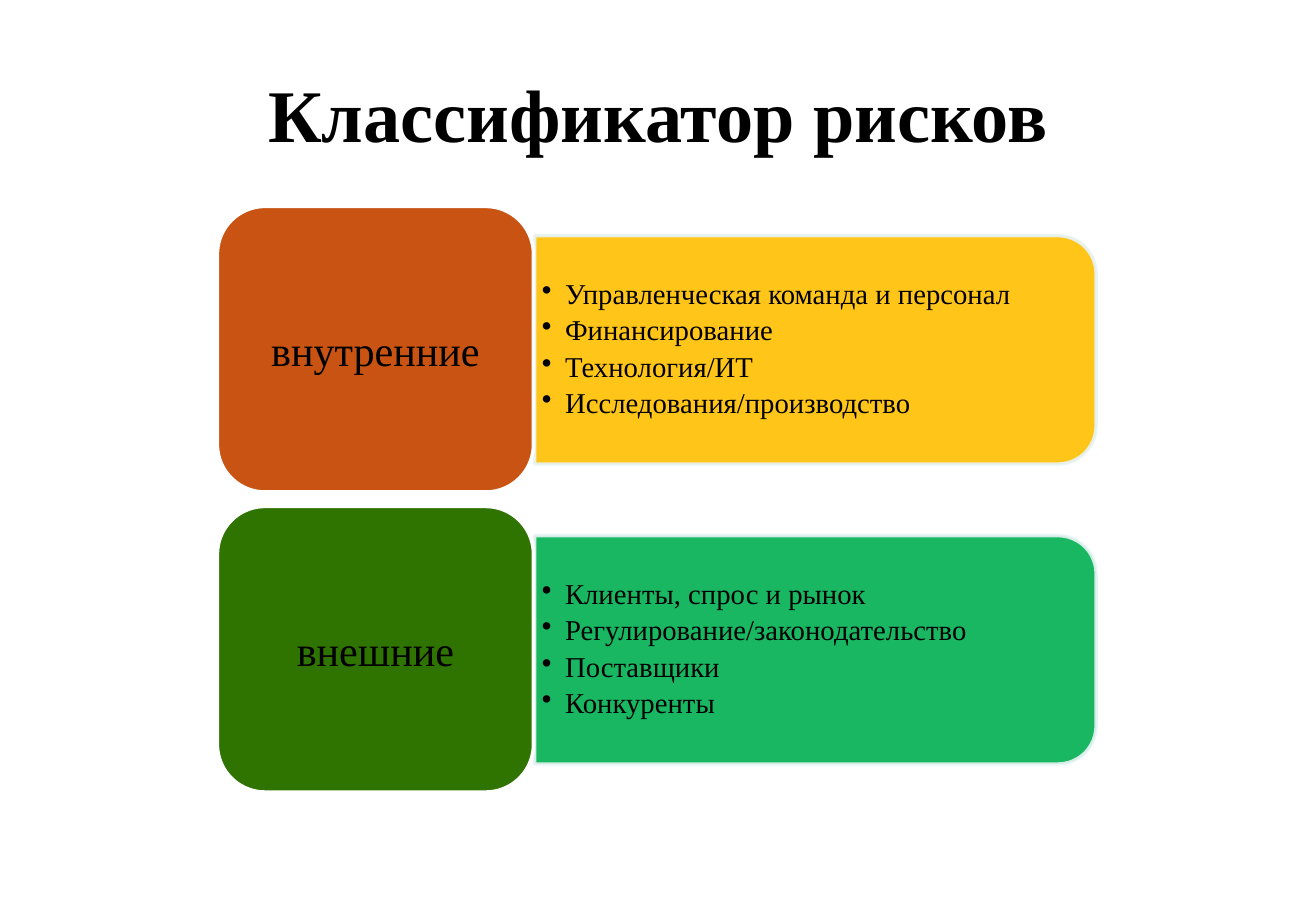
from lxml import etree
from pptx import Presentation
from pptx.dml.color import RGBColor
from pptx.enum.shapes import MSO_SHAPE
from pptx.enum.text import MSO_ANCHOR, PP_ALIGN
from pptx.oxml.ns import qn
from pptx.util import Emu, Pt

ROUNDED = MSO_SHAPE.ROUNDED_RECTANGLE
TOP_ROUNDED = MSO_SHAPE.ROUND_2_SAME_RECTANGLE
MIDDLE = MSO_ANCHOR.MIDDLE
CENTER = PP_ALIGN.CENTER
LEFT = PP_ALIGN.LEFT

EMU_PER_PX = 9144
SLIDE_SIZE = (1083, 750)
FIRST_TOP = 170
ROW_STEP = 247

RISK_GROUPS = [
    ("внутренние", "C85312", "FFC000", [
        "Управленческая команда и персонал",
        "Финансирование",
        "Технология/ИТ",
        "Исследования/производство",
    ]),
    ("внешние", "2F7301", "00B050", [
        "Клиенты, спрос и рынок",
        "Регулирование/законодательство",
        "Поставщики",
        "Конкуренты",
    ]),
]


def px(length):
    return Emu(length * EMU_PER_PX)


def color(value):
    return RGBColor.from_string(value)


def apply(target, formats):
    for name, value in formats.items():
        setattr(target, name, value)


def set_alpha(fill_parent, percent):
    tint = fill_parent.find(qn("a:solidFill")).find(qn("a:srgbClr"))
    etree.SubElement(tint, qn("a:alpha"), val=str(percent * 1000))


class RiskSlide:
    font_name = "Times New Roman"
    text_color = "000000"

    def __init__(self, slide):
        self.shapes = slide.shapes

    def fill_text(self, frame, lines, size, insets, bold=False, bulleted=False):
        across, down = map(px, insets)
        apply(frame, {
            "word_wrap": True, "vertical_anchor": MIDDLE,
            "margin_left": across, "margin_right": across,
            "margin_top": down, "margin_bottom": down,
        })
        for index, line in enumerate(lines):
            paragraph = frame.add_paragraph() if index else frame.paragraphs[0]
            paragraph.alignment = LEFT if bulleted else CENTER
            if bulleted:
                properties = paragraph._p.get_or_add_pPr()
                properties.set("marL", str(px(19)))
                properties.set("indent", str(px(-19)))
                etree.SubElement(properties, qn("a:buChar"), char="•")
                apply(paragraph, {"line_spacing": 0.9, "space_after": Pt(3.3)})
            run = paragraph.add_run()
            run.text = line
            apply(run.font, {"name": self.font_name, "size": Pt(size), "bold": bold})
            run.font.color.rgb = color(self.text_color)

    def text(self, box, lines, size, insets, **style):
        textbox = self.shapes.add_textbox(*map(px, box))
        self.fill_text(textbox.text_frame, lines, size, insets, **style)

    def block(self, kind, box, fill, outline):
        block = self.shapes.add_shape(kind, *map(px, box))
        block.shadow.inherit = False
        block.fill.solid()
        block.fill.fore_color.rgb = color(fill)
        block.line.color.rgb = color(outline)
        block.line.width = Pt(2)
        return block

    def panel(self, top, fill, risks):
        panel = self.block(TOP_ROUNDED, (577, top - 113, 188, 462), fill, "E7F3F4")
        panel.rotation = 90
        properties = panel._element.spPr
        set_alpha(properties, 90)
        set_alpha(properties.find(qn("a:ln")), 90)
        self.text((439, top + 33, 453, 170), risks, 17, (7, 4), bulleted=True)

    def category(self, top, fill, name):
        category = self.block(ROUNDED, (179, top, 260, 235), fill, "FFFFFF")
        self.fill_text(category.text_frame, [name], 25, (10, 5))


def main():
    deck = Presentation()
    deck.slide_width, deck.slide_height = map(px, SLIDE_SIZE)
    classifier = RiskSlide(deck.slides.add_slide(deck.slide_layouts[6]))
    classifier.text((54, 30, 975, 125), ["Классификатор рисков"], 44, (10, 5), bold=True)
    for row, (name, category_fill, panel_fill, risks) in enumerate(RISK_GROUPS):
        top = FIRST_TOP + row * ROW_STEP
        classifier.panel(top, panel_fill, risks)
        classifier.category(top, category_fill, name)
    deck.save("out.pptx")


if __name__ == "__main__":
    main()
